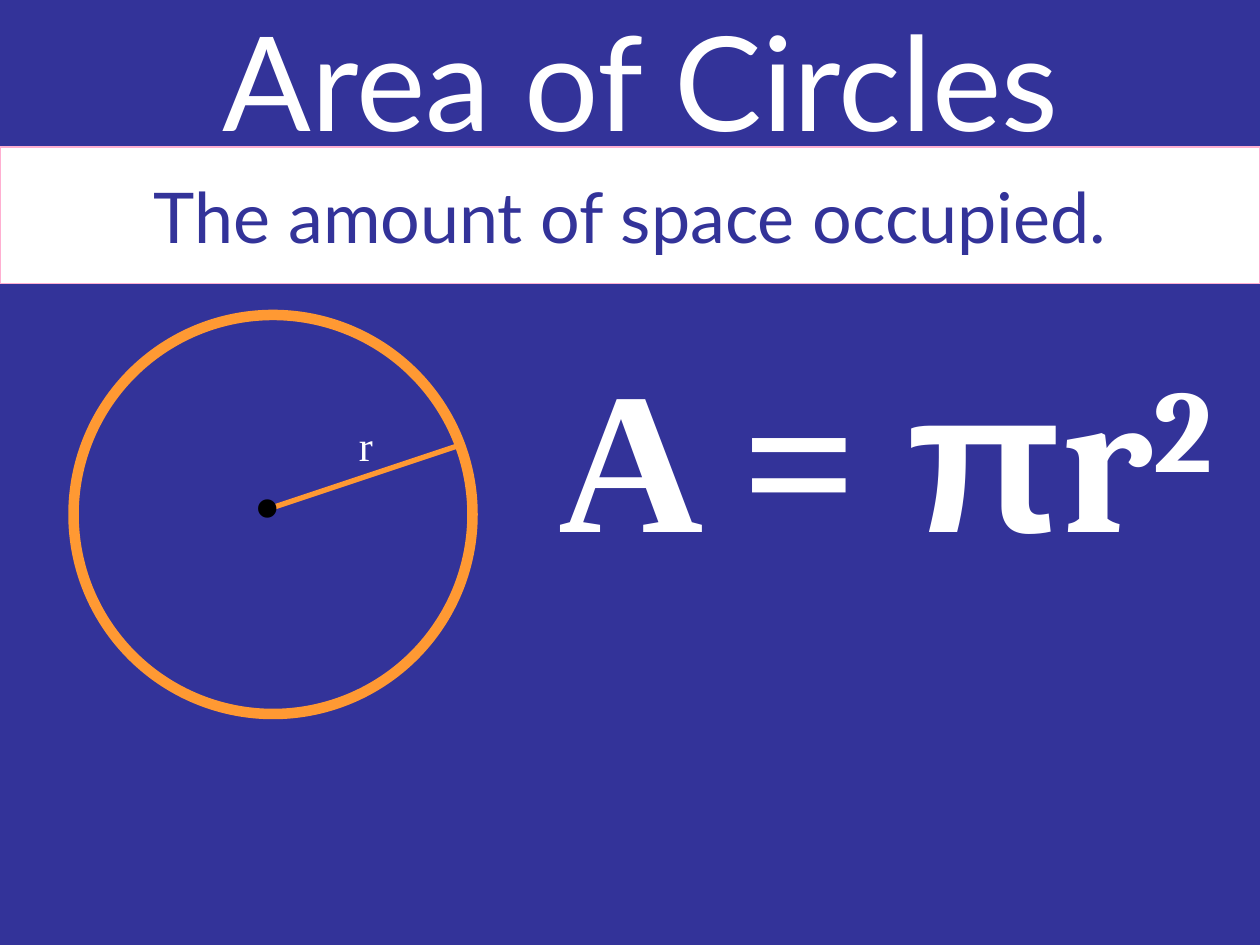
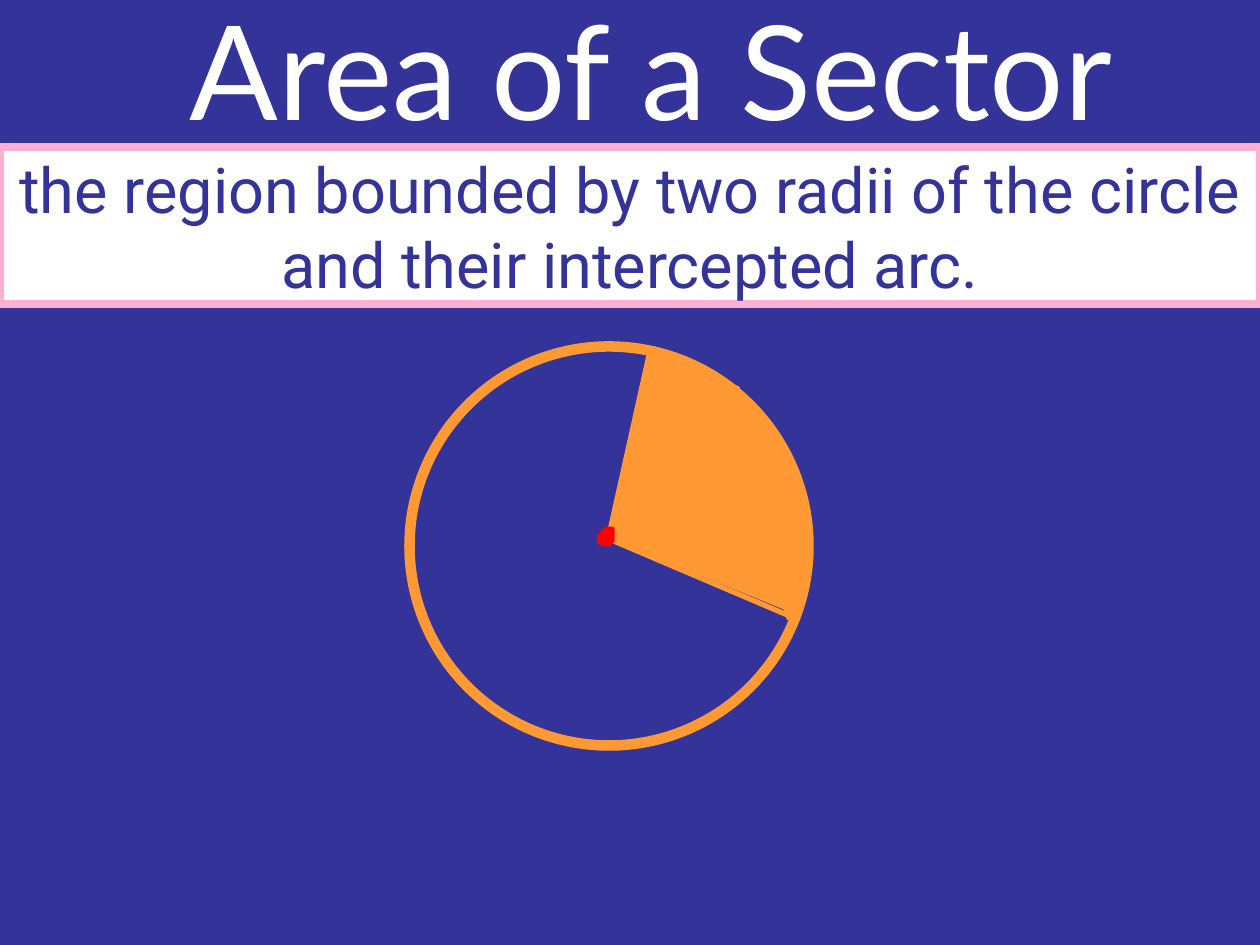
from collections import namedtuple

from lxml import etree
from pptx import Presentation
from pptx.dml.color import RGBColor
from pptx.enum.shapes import MSO_CONNECTOR, MSO_SHAPE
from pptx.enum.text import MSO_ANCHOR, MSO_AUTO_SIZE, PP_ALIGN
from pptx.oxml.ns import qn
from pptx.util import Inches, Pt

COLORS = {"blue": "333399", "white": "FFFFFF", "pink": "FFAFD1",
          "orange": "FF9933", "red": "FF0000", "black": "000000"}
COLS, ROWS = 120, 90
CELL = Inches(10) / COLS
SERIF = "Times New Roman"


class Box(namedtuple("Box", "x y w h")):
    """A region measured in grid cells."""

    def sub(self, x, y, w, h):
        return Box(self.x + x, self.y + y, w, h)

    def point(self, x, y):
        return cells(self.x + x), cells(self.y + y)

    def emu(self):
        return [cells(n) for n in self]


def cells(n):
    return round(n * CELL)


def rgb(name):
    return RGBColor.from_string(COLORS[name])


def paint(sp, fill=None, line=None, width=0.75):
    sp.shadow.inherit = False
    if fill:
        sp.fill.solid()
        sp.fill.fore_color.rgb = rgb(fill)
    else:
        sp.fill.background()
    if line:
        sp.line.color.rgb = rgb(line)
        sp.line.width = Pt(width)
    else:
        sp.line.fill.background()


def style_run(r, size, font, color, bold=False):
    r.font.size = Pt(size)
    r.font.name = font
    r.font.color.rgb = rgb(color)
    r.font.bold = bold


def add_shape(shapes, kind, box, **look):
    sp = shapes.add_shape(kind, *box.emu())
    paint(sp, **look)
    return sp


def add_polygon(shapes, box, points, **look):
    start, *rest = [box.point(*xy) for xy in points]
    builder = shapes.build_freeform(*start)
    builder.add_line_segments(rest, close=True)
    paint(builder.convert_to_shape(), **look)


def add_radius(shapes, box, start, end, oval=False):
    line = shapes.add_connector(MSO_CONNECTOR.STRAIGHT,
                                *box.point(*start), *box.point(*end))
    line.line.color.rgb = rgb("orange")
    line.line.width = Pt(3)
    sp_pr = line._element.spPr
    if oval:
        etree.SubElement(sp_pr.find(qn("a:ln")), qn("a:tailEnd"), type="oval")
    etree.SubElement(sp_pr, qn("a:effectLst"))


def add_band(s, box, text, size, font, color, **look):
    """Filled rectangle with one centred text."""
    sp = add_shape(s.shapes, MSO_SHAPE.RECTANGLE, box, **look)
    tf = sp.text_frame
    tf.text = text
    tf.word_wrap = True
    tf.vertical_anchor = MSO_ANCHOR.MIDDLE
    p = tf.paragraphs[0]
    p.alignment = PP_ALIGN.CENTER
    style_run(p.runs[0], size, font, color)


def add_text(shapes, box, parts, size, color, bold=False, wrap=True):
    """Text box whose parts are (text, font) pairs."""
    tf = shapes.add_textbox(*box.emu()).text_frame
    tf.word_wrap = wrap
    tf.auto_size = MSO_AUTO_SIZE.SHAPE_TO_FIT_TEXT
    for text, font in parts:
        r = tf.paragraphs[0].add_run()
        r.text = text
        style_run(r, size, font, color, bold)
    return tf


def add_circle(s, box, center, radii):
    """Group with the ring, its centre mark and its radii."""
    shapes = s.shapes.add_group_shape().shapes
    add_shape(shapes, MSO_SHAPE.OVAL, box, line="orange", width=6)
    add_radius(shapes, box, center, center, oval=True)
    for start, end in radii:
        add_radius(shapes, box, start, end)
    return shapes


def add_radius_circle(s, box):
    center = (19, 18.33)
    shapes = add_circle(s, box, center, [(center, (37, 12.33))])
    add_text(shapes, box.sub(26, 9.33, 7, 6), [("r", SERIF)], 24, "white")


def add_formula(s, box):
    parts = [("A = ", SERIF), ("π", "Arial"), ("r", "Cambria"), ("2", "Cambria")]
    tf = add_text(s.shapes, box, parts, 115, "white", bold=True)
    exponent = tf.paragraphs[0].runs[-1]
    exponent.font._element.set("baseline", "30000")


def add_sector_circle(s, box):
    center = (19, 18.33)
    shapes = add_circle(s, box, center, [(center, (37, 26)), ((19, 18), (23, 0))])
    orange = {"fill": "orange", "line": "orange"}
    wedges = [((13.8, 9, 24, 14), 251.8, 0.5), ((19, 1.1, 9, 17.9), 205.4, 0.55)]
    for place, angle, apex in wedges:
        sp = add_shape(shapes, MSO_SHAPE.ISOSCELES_TRIANGLE, box.sub(*place), **orange)
        sp.rotation = angle
        sp.adjustments[0] = apex
    arc_fills = [
        [(30, 4), (34, 7), (37, 16), (37, 25), (36, 26), (29, 3)],
        [(34, 8), (37, 24), (38, 21), (38, 19), (38, 17), (38, 15),
         (37, 13), (36, 11), (35, 9)],
    ]
    for points in arc_fills:
        add_polygon(shapes, box, points, **orange)
    center_dot = [(18.5, 17.6), (18.8, 17.4), (19.3, 17.4), (19.3, 18.5),
                  (19, 18.8), (18.5, 18.8), (18.1, 18.6), (18.1, 18.1)]
    add_polygon(s.shapes, box, center_dot, fill="red", line="red", width=3)


def add_titled_slide(prs, title, title_box, definition, band_box, size, font, border):
    s = prs.slides.add_slide(prs.slide_layouts[6])
    s.background.fill.solid()
    s.background.fill.fore_color.rgb = rgb("blue")
    add_band(s, title_box, title, 75, "Lato", "white", fill="blue")
    add_band(s, band_box, definition, size, font, "blue",
             fill="white", line="pink", width=border)
    return s


def circle_slide(prs):
    s = add_titled_slide(prs, "Area of Circles", Box(10, 0, 102, 15),
                         "The amount of space occupied.", Box(0, 14, COLS, 13),
                         40, "Lato", 1)
    add_radius_circle(s, Box(7, 30, 38, 38))
    add_formula(s, Box(52, 31, 68, 24.5))
    add_text(s.shapes, Box(23, 43, 5.9, 10.1), [("•", SERIF)], 44, "black", wrap=False)


def sector_slide(prs):
    s = add_titled_slide(prs, "Area of a Sector", Box(11, 0, 102, 13),
                         "the region bounded by two radii of the circle "
                         "and their intercepted arc.", Box(0, 14, COLS, 15),
                         36, "Roboto", 4.5)
    add_sector_circle(s, Box(39, 33, 38, 38))


def main():
    prs = Presentation()
    prs.slide_width, prs.slide_height = cells(COLS), cells(ROWS)
    circle_slide(prs)
    sector_slide(prs)
    prs.save("out.pptx")


if __name__ == "__main__":
    main()
